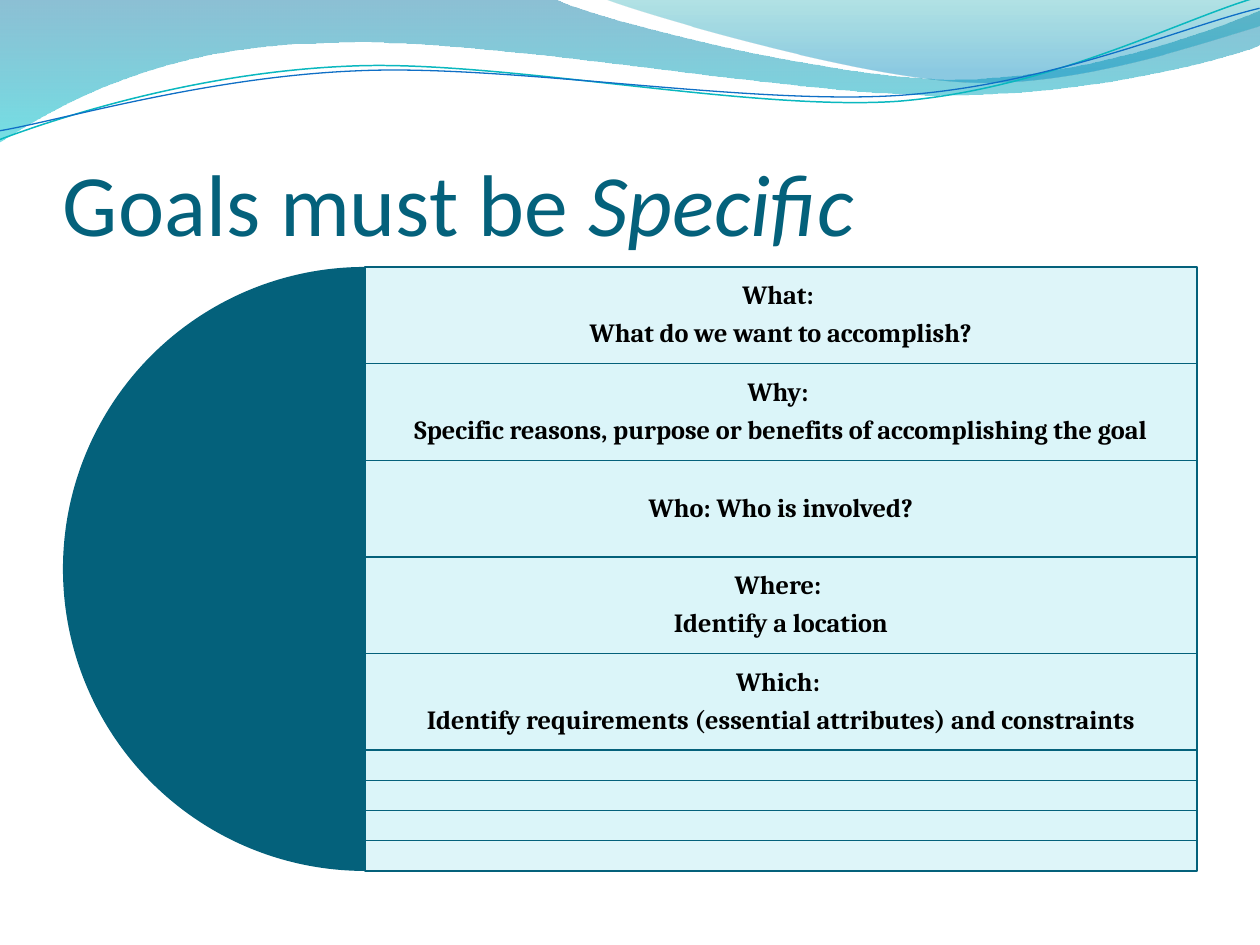
from lxml.etree import SubElement
from pptx import Presentation
from pptx.dml.color import RGBColor
from pptx.enum.shapes import MSO_SHAPE as Preset
from pptx.enum.text import MSO_ANCHOR as Anchor, PP_ALIGN as Align
from pptx.oxml.ns import qn
from pptx.util import Pt

PX = 914400 / 126
DARK, PALE = "04617B", "DBF5F9"
STRAND_TILT = 357.3

BANDS = [
    ([(0, 0), [(554, -1)],
      [(600, 21), (837, 79), (955, 79)], [(1075, 79), (1207, 33), (1260, 11)],
      [(1261, 45)],
      [(1239, 55), (1096, 96), (940, 95)], [(784, 95), (481, 35), (324, 43)],
      [(163, 45), (58, 105), (-1, 142)], [(0, 0)]],
     [(0, "0074A1", 45), (1, "00C6CF", 55)]),
    ([(604, -1),
      [(641, 14), (859, 78), (969, 82)], [(1079, 87), (1211, 40), (1260, 26)],
      [(1260, 0)], [(604, -1)]],
     [(0, "00A1A9", 30), (0.8, "008BBF", 45)]),
]
STRANDS = [
    ([(-3, 110), [(59, 90), (199, 52), (350, 53)],
      [(499, 53), (745, 117), (896, 114)], [(1048, 109), (1184, 45), (1260, 27)]],
     "0AB8BF", 0.85),
    ([(-2, 101), [(57, 94), (207, 57), (357, 58)],
      [(509, 58), (750, 112), (902, 108)], [(1052, 104), (1187, 52), (1262, 38)]],
     "0F6FC6", 0.75),
]
QUESTIONS = [
    ["What: ", "What do we want to accomplish?"],
    ["Why: ", "Specific reasons, purpose or benefits of accomplishing the goal"],
    ["Who: Who is involved?"],
    ["Where: ", "Identify a location"],
    ["Which: ", "Identify requirements (essential attributes) and constraints"],
]


def emu(*lengths):
    """Turn px lengths into EMU."""
    return [round(length * PX) for length in lengths]


def paint(color_format, color):
    """Set a colour from a hex string."""
    color_format.rgb = RGBColor.from_string(color)


def fade(fill_xml, alphas):
    """Add an opacity in percent to each colour of a fill in turn."""
    for color, alpha in zip(fill_xml.iter(qn("a:srgbClr")), alphas):
        SubElement(color, qn("a:alpha"), val=str(alpha * 1000))


def add_outline(slide, left, top, path, close):
    """Draw a path of lines and cubic curves relative to a corner."""
    start, *segments = path
    builder = slide.shapes.build_freeform(*emu(left + start[0], top + start[1]))
    builder.add_line_segments(
        [emu(left + x, top + y) for segment in segments for x, y in segment],
        close=close)
    outline = builder.convert_to_shape()
    outline.shadow.inherit = False
    steps = iter(list(outline._element.iter(qn("a:lnTo"))))
    for segment in segments:
        first, *others = [next(steps) for _ in segment]
        if others:
            curve = first.getparent().makeelement(qn("a:cubicBezTo"))
            first.addprevious(curve)
            for step in (first, *others):
                curve.append(step[0])
                step.getparent().remove(step)
    return outline


def add_waves(slide, left, top):
    """Draw the gradient bands and thin strands of the header."""
    for path, stops in BANDS:
        band = add_outline(slide, left, top, path, True)
        band.line.fill.background()
        band.fill.gradient()
        band.fill.gradient_angle = 270
        for stop, (position, color, _) in zip(band.fill.gradient_stops, stops):
            stop.position = position
            paint(stop.color, color)
        fade(band._element.spPr.find(qn("a:gradFill")), [s[2] for s in stops])
    for path, color, width in STRANDS:
        strand = add_outline(slide, left, top, path, False)
        strand.rotation = STRAND_TILT
        strand.fill.background()
        paint(strand.line.color, color)
        strand.line.width = Pt(width)


def add_text_frame(slide, box, margins, anchor):
    """Add a wrapping text box and return its frame."""
    frame = slide.shapes.add_textbox(*emu(*box)).text_frame
    frame.word_wrap = True
    frame.vertical_anchor = anchor
    (frame.margin_left, frame.margin_top,
     frame.margin_right, frame.margin_bottom) = emu(*margins)
    return frame


def add_run(paragraph, text, font_name, size, color, bold=False, italic=False):
    """Append one formatted run."""
    run = paragraph.add_run()
    run.text = text
    run.font.name, run.font.size = font_name, Pt(size)
    run.font.bold, run.font.italic = bold, italic
    paint(run.font.color, color)


def add_title(slide, box):
    """Write the slide title."""
    title = add_text_frame(slide, box, (0, 6, 0, 0), Anchor.BOTTOM).paragraphs[0]
    add_run(title, "Goals must be ", "Calibri", 50, DARK)
    add_run(title, "Specific", "Calibri", 50, DARK, italic=True)


def add_question(slide, box, lines):
    """Write one question centred in its row."""
    frame = add_text_frame(slide, box, (8, 8, 8, 8), Anchor.MIDDLE)
    for index, line in enumerate(lines):
        paragraph = frame.add_paragraph() if index else frame.paragraphs[0]
        paragraph.alignment = Align.CENTER
        paragraph.line_spacing = 0.9
        paragraph.space_after = Pt(5.5)
        add_run(paragraph, line, "Cambria", 15, "000000", bold=True)


def add_target(slide, left, top, width, height):
    """Nest half discs and panels, one level for each question."""
    row = height * 0.16
    shrink = (height - row) / (len(QUESTIONS) - 1)
    center = left + height / 2
    panel_width = left + width - center
    for level, lines in enumerate(QUESTIONS):
        size, y = height - level * shrink, top + level * row
        disc = slide.shapes.add_shape(
            Preset.PIE, *emu(center - size / 2, y, size, size))
        disc.adjustments[0], disc.adjustments[1] = 54, 162
        disc.line.fill.background()
        panel = slide.shapes.add_shape(
            Preset.RECTANGLE, *emu(center, y, panel_width, size))
        paint(panel.line.color, DARK)
        panel.line.width = Pt(0.75)
        for shape, color in ((disc, DARK), (panel, PALE)):
            shape.shadow.inherit = False
            shape.fill.solid()
            paint(shape.fill.fore_color, color)
        fade(panel._element.spPr.find(qn("a:solidFill")), [90])
        add_question(slide, (center, y, panel_width, row), lines)


def main():
    """Build and save the slide."""
    deck = Presentation()
    deck.slide_width, deck.slide_height = emu(1260, 945)
    slide = deck.slides.add_slide(deck.slide_layouts[6])
    add_waves(slide, 0, 0)
    add_title(slide, (63, 97, 1134, 157))
    add_target(slide, 63, 267, 1134, 604)
    deck.save("out.pptx")


if __name__ == "__main__":
    main()
